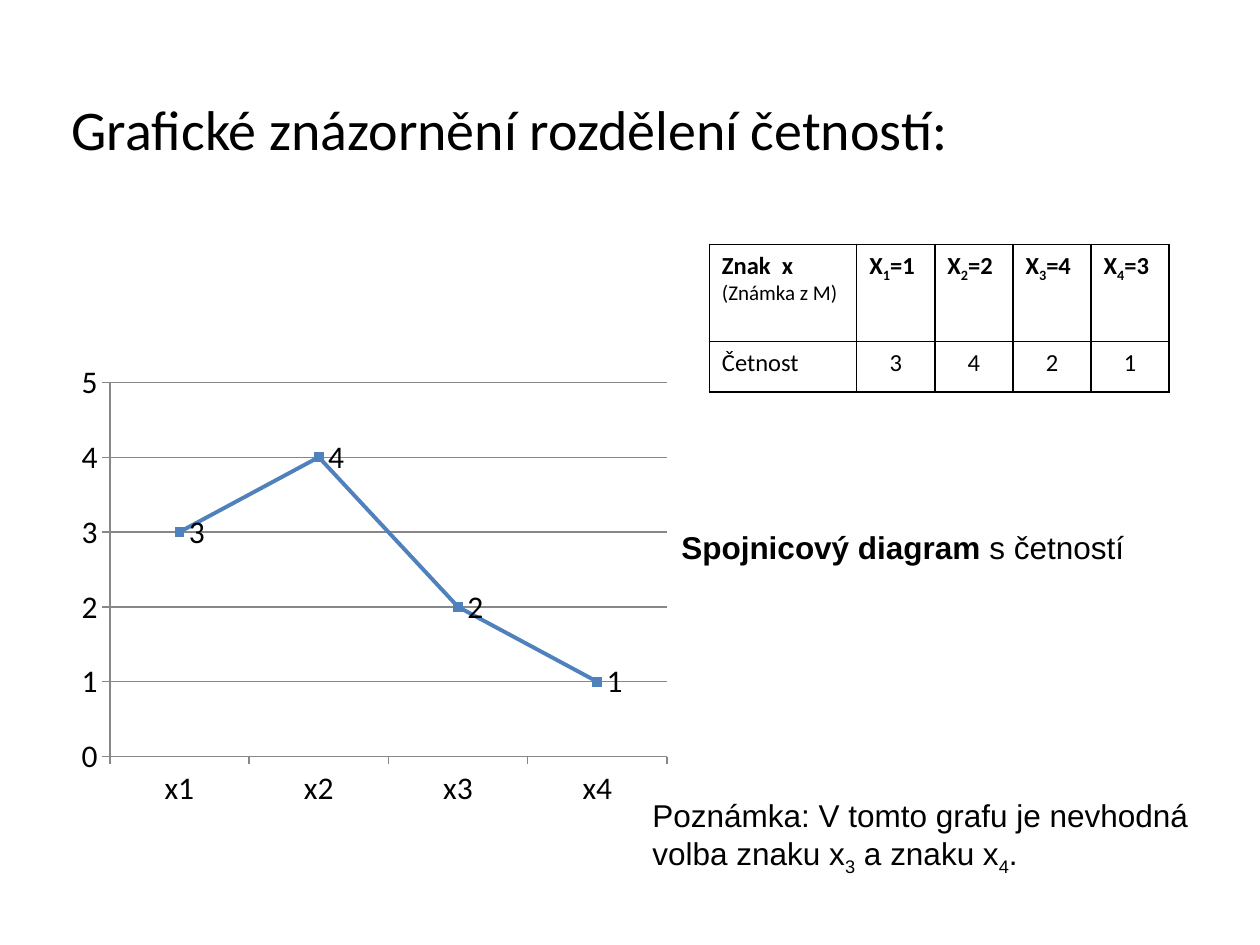
from dataclasses import dataclass

from lxml import etree
from pptx import Presentation
from pptx import util as u
from pptx.chart import data as chart_data
from pptx.dml.color import RGBColor
from pptx.enum import chart as charts
from pptx.enum import text
from pptx.oxml import ns

PX = 9144  # 100 px to the inch
BLACK, WHITE, BLUE, GREY = "000000", "FFFFFF", "4F81BD", "878787"


@dataclass
class Span:
    words: str
    bold: bool = False
    sub: bool = False
    size: int | None = None


@dataclass
class Note:
    left: int
    top: int
    width: int
    height: int
    spans: list[Span]
    font: str = "Arial"
    size: int = 18


NOTES = [
    Note(47, 70, 910, 63, [Span("Grafické znázornění rozdělení četností:")], "Calibri", 32),
    Note(531, 414, 457, 40, [Span("Spojnicový diagram", bold=True), Span(" s četností")]),
    Note(508, 627, 465, 70, [
        Span("Poznámka: V tomto grafu je nevhodná volba znaku x"), Span("3", sub=True),
        Span(" a znaku x"), Span("4", sub=True), Span("."),
    ]),
]
MARKS = [1, 2, 4, 3]
COUNTS = [3, 4, 2, 1]


def px(length: int) -> u.Emu:
    return u.Emu(length * PX)


def colour(value: str) -> RGBColor:
    return RGBColor.from_string(value)


def set_font(font, name: str, size: int) -> None:
    font.name, font.size = name, u.Pt(size)
    font.color.rgb = colour(BLACK)


def write(para, spans: list[Span], font: str, size: int) -> None:
    set_font(para.font, font, size)
    for item in spans:
        span = para.add_run()
        span.text = item.words
        if item.bold:
            span.font.bold = True
        if item.size:
            span.font.size = u.Pt(item.size)
        if item.sub:
            span._r.get_or_add_rPr().set("baseline", "-25000")


def add_note(page, note: Note) -> None:
    box = page.shapes.add_textbox(*map(px, (note.left, note.top, note.width, note.height)))
    frame = box.text_frame
    frame.word_wrap = True
    frame.auto_size = text.MSO_AUTO_SIZE.SHAPE_TO_FIT_TEXT
    write(frame.paragraphs[0], note.spans, note.font, note.size)


def add_borders(cell) -> None:
    """Draw the four sides; they must come before the fill in the cell's XML."""
    properties = cell._tc.get_or_add_tcPr()
    for place, side in enumerate(("lnL", "lnR", "lnT", "lnB")):
        line = etree.Element(ns.qn(f"a:{side}"), w=str(u.Pt(1)))
        fill = etree.SubElement(line, ns.qn("a:solidFill"))
        etree.SubElement(fill, ns.qn("a:srgbClr"), val=BLACK)
        properties.insert(place, line)


def add_frequency_table(page) -> None:
    header = [[Span("Znak  x ", bold=True), Span("(Známka z M)", size=12)]]
    header += [
        [Span("X", bold=True), Span(str(index), bold=True, sub=True), Span(f"={mark}", bold=True)]
        for index, mark in enumerate(MARKS, 1)
    ]
    counts = [[Span(words)] for words in ["Četnost", *map(str, COUNTS)]]
    widths, heights = [117] + [62] * len(MARKS), [77, 40]
    table = page.shapes.add_table(
        len(heights), len(widths), px(563), px(194), px(sum(widths)), px(sum(heights))
    ).table
    table.first_row = table.horz_banding = False
    for column, width in zip(table.columns, widths):
        column.width = px(width)
    for row, height in zip(table.rows, heights):
        row.height = px(height)
    for r, row in enumerate((header, counts)):
        for c, spans in enumerate(row):
            cell = table.cell(r, c)
            cell.fill.solid()
            cell.fill.fore_color.rgb = colour(WHITE)
            add_borders(cell)
            para = cell.text_frame.paragraphs[0]
            write(para, spans, "Calibri", 14)
            if r and c:
                para.alignment = text.PP_ALIGN.CENTER


def add_frequency_chart(page) -> None:
    data = chart_data.CategoryChartData()
    data.categories = [f"x{index}" for index in range(1, len(COUNTS) + 1)]
    data.add_series("Series 1", COUNTS)
    chart = page.shapes.add_chart(
        charts.XL_CHART_TYPE.LINE_MARKERS_STACKED, px(55), px(281), px(484), px(367), data
    ).chart
    chart.has_legend = chart.has_title = False
    set_font(chart.font, "Calibri", 18)

    values = chart.value_axis
    values.minimum_scale, values.maximum_scale, values.major_unit = 0, 5, 1
    values.has_major_gridlines = True
    for axis in (chart.category_axis, values):
        axis.major_tick_mark = charts.XL_TICK_MARK.OUTSIDE
        axis.format.line.color.rgb = colour(GREY)
    values.major_gridlines.format.line.color.rgb = colour(GREY)

    plot = chart.plots[0]
    plot.vary_by_categories = False
    series = plot.series[0]
    series.smooth = False
    series.format.line.color.rgb = colour(BLUE)
    series.format.line.width = u.Pt(2.25)
    marker = series.marker
    marker.style, marker.size = charts.XL_MARKER_STYLE.SQUARE, 5
    marker.format.fill.solid()
    marker.format.fill.fore_color.rgb = colour(BLUE)
    marker.format.line.color.rgb = colour(BLUE)
    labels = series.data_labels
    labels.show_value = True
    labels.position = charts.XL_LABEL_POSITION.RIGHT
    set_font(labels.font, "Calibri", 18)


def main() -> None:
    deck = Presentation()
    deck.slide_width, deck.slide_height = px(1000), px(750)
    page = deck.slides.add_slide(deck.slide_layouts[6])
    page.background.fill.solid()
    page.background.fill.fore_color.rgb = colour(WHITE)
    add_frequency_table(page)
    for note in NOTES:
        add_note(page, note)
    add_frequency_chart(page)
    deck.save("out.pptx")


if __name__ == "__main__":
    main()
